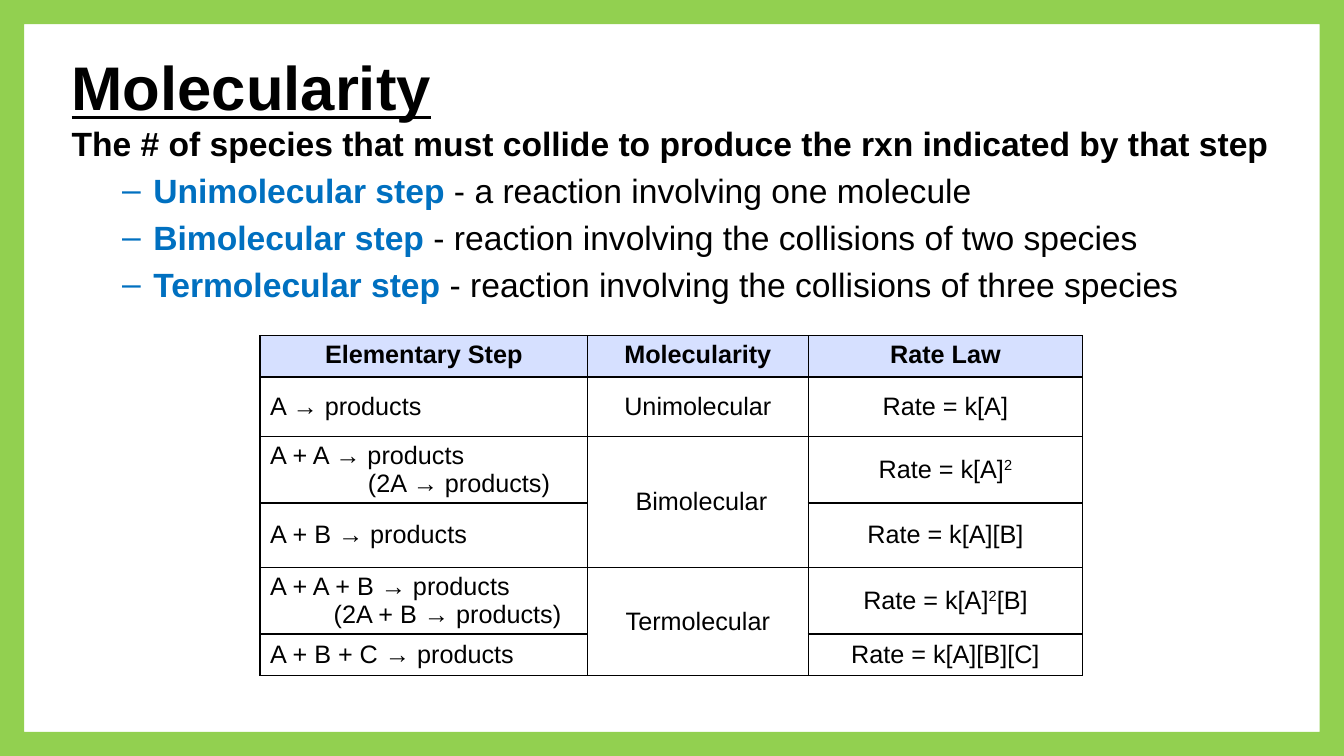
import lxml.etree
import pptx
import pptx.dml.color
import pptx.enum.shapes
import pptx.enum.text
import pptx.oxml.ns
import pptx.util

BLACK = pptx.dml.color.RGBColor(0x00, 0x00, 0x00)
WHITE = pptx.dml.color.RGBColor(0xFF, 0xFF, 0xFF)
BLUE = pptx.dml.color.RGBColor(0x00, 0x70, 0xC0)
GREEN = pptx.dml.color.RGBColor(0x92, 0xD0, 0x50)
HEADER_FILL = pptx.dml.color.RGBColor(0xD6, 0xE0, 0xFF)

ALIGN = pptx.enum.text.PP_ALIGN
ANCHOR = pptx.enum.text.MSO_ANCHOR
WIDTH = pptx.util.Inches(13.33)
HEIGHT = pptx.util.Inches(7.5)

# Boxes are left, top, width and height in percent of the slide.
TITLE_BOX = (4.58, 3.07, 63.77, 16.67)
BODY_BOX = (4.58, 15.6, 92.35, 77.73)
TABLE_BOX = (19.35, 44.4, 61.2, 44.93)
COLUMN_SHARES = (39.8, 26.85, 33.35)
ROW_SHARES = (12.17, 17.51, 19.58, 18.99, 19.58, 12.17)

LEAD = "The # of species that must collide to produce the rxn indicated by that step"
STEPS = [
    ("Unimolecular step ", "- a reaction involving one molecule"),
    ("Bimolecular step ", "- reaction involving the collisions of two species"),
    ("Termolecular step ", "- reaction involving the collisions of three species"),
]
HEADINGS = ("Elementary Step", "Molecularity", "Rate Law")
RATE_LAWS = [
    ("A → products", "Unimolecular", "Rate = k[A]"),
    ("A + A → products\n(2A → products)", " Bimolecular", "Rate = k[A]^2"),
    ("A + B → products", "", "Rate = k[A][B]"),
    ("A + A + B → products\n(2A + B → products)", "Termolecular", "Rate = k[A]^2^[B]"),
    ("A + B + C → products", "", "Rate = k[A][B][C]"),
]
SECOND_LINE_INDENTS = {2: 0.97, 4: 0.63}
MERGED_ROWS = [(2, 3), (4, 5)]


def share(total, percent):
    """Return a percentage of a length."""
    return pptx.util.Emu(round(total * percent / 100))


def place(box):
    """Turn a box in percent of the slide into lengths."""
    return [share(total, part) for total, part in zip((WIDTH, HEIGHT) * 2, box)]


def add_text(para, text, size=18, color=BLACK, bold=True, underline=None):
    """Add text to a paragraph, raising every part between carets."""
    for index, part in enumerate(text.split("^")):
        if not part:
            continue
        span = para.add_run()
        span.text = part
        span.font.name = "Arial"
        span.font.size = pptx.util.Pt(size)
        span.font.bold = bold
        span.font.underline = underline
        span.font.color.rgb = color
        if index % 2:
            span.font._element.set("baseline", "30000")


def indent(para, left, first=0.0, bullet=None):
    """Set the indents and the bullet of a paragraph."""
    props = para._p.get_or_add_pPr()
    props.set("marL", str(pptx.util.Inches(left)))
    props.set("indent", str(pptx.util.Inches(first)))
    tag = "a:buChar" if bullet else "a:buNone"
    mark = lxml.etree.SubElement(props, pptx.oxml.ns.qn(tag))
    if bullet:
        mark.set("char", bullet)


def prepare_placeholder(holder, box, anchor):
    """Move a placeholder to its box and return its text frame."""
    holder.left, holder.top, holder.width, holder.height = place(box)
    frame = holder.text_frame
    frame.word_wrap = True
    frame.auto_size = pptx.enum.text.MSO_AUTO_SIZE.NONE
    frame.vertical_anchor = anchor
    return frame


def fill_title(page, box):
    """Write the underlined title."""
    para = prepare_placeholder(page.shapes.title, box, ANCHOR.MIDDLE).paragraphs[0]
    para.alignment = ALIGN.LEFT
    add_text(para, "Molecularity", size=44, underline=True)


def fill_body(page, box):
    """Write the definition and the list of steps."""
    frame = prepare_placeholder(page.placeholders[1], box, ANCHOR.TOP)
    add_text(frame.paragraphs[0], LEAD, size=24)
    indent(frame.paragraphs[0], 0)
    for term, meaning in STEPS:
        para = frame.add_paragraph()
        para.level = 1
        indent(para, 0.81, -0.31, "–")
        add_text(para, term, size=24, color=BLUE)
        add_text(para, meaning, size=24, bold=False)


def style_cell(cell, fill):
    """Give a cell thin black borders and a plain fill."""
    props = cell._tc.get_or_add_tcPr()
    for side in ("a:lnL", "a:lnR", "a:lnT", "a:lnB"):
        line = lxml.etree.SubElement(props, pptx.oxml.ns.qn(side), w=str(pptx.util.Pt(1)))
        solid = lxml.etree.SubElement(line, pptx.oxml.ns.qn("a:solidFill"))
        lxml.etree.SubElement(solid, pptx.oxml.ns.qn("a:srgbClr"), val=str(BLACK))
    cell.fill.solid()
    cell.fill.fore_color.rgb = fill


def add_rate_table(page, box):
    """Add the table of elementary steps and rate laws."""
    rows = [HEADINGS] + RATE_LAWS
    left, top, width, height = place(box)
    table = page.shapes.add_table(len(rows), len(HEADINGS), left, top, width, height).table
    for column, part in zip(table.columns, COLUMN_SHARES):
        column.width = share(width, part)
    for row, part in zip(table.rows, ROW_SHARES):
        row.height = share(height, part)
    for first, last in MERGED_ROWS:
        table.cell(first, 1).merge(table.cell(last, 1))
    for row_index, row in enumerate(rows):
        header = row_index == 0
        for column_index, text in enumerate(row):
            cell = table.cell(row_index, column_index)
            style_cell(cell, HEADER_FILL if header else WHITE)
            cell.vertical_anchor = ANCHOR.TOP if header else ANCHOR.MIDDLE
            for line_index, line in enumerate(text.split("\n")):
                frame = cell.text_frame
                para = frame.add_paragraph() if line_index else frame.paragraphs[0]
                centred = header or column_index > 0
                para.alignment = ALIGN.CENTER if centred else ALIGN.LEFT
                if line_index:
                    indent(para, SECOND_LINE_INDENTS[row_index])
                add_text(para, line, bold=header)


def add_border(page):
    """Add the green frame around the slide."""
    border = page.shapes.add_shape(
        pptx.enum.shapes.MSO_SHAPE.FRAME, 0, 0, WIDTH, HEIGHT)
    border.adjustments[0] = 0.032
    border.shadow.inherit = False
    border.fill.solid()
    border.fill.fore_color.rgb = GREEN
    border.line.fill.background()


def main():
    """Build the slide and save it."""
    deck = pptx.Presentation()
    deck.slide_width, deck.slide_height = WIDTH, HEIGHT
    page = deck.slides.add_slide(deck.slide_layouts[1])
    fill_body(page, BODY_BOX)
    add_rate_table(page, TABLE_BOX)
    fill_title(page, TITLE_BOX)
    add_border(page)
    deck.save("out.pptx")


if __name__ == "__main__":
    main()
